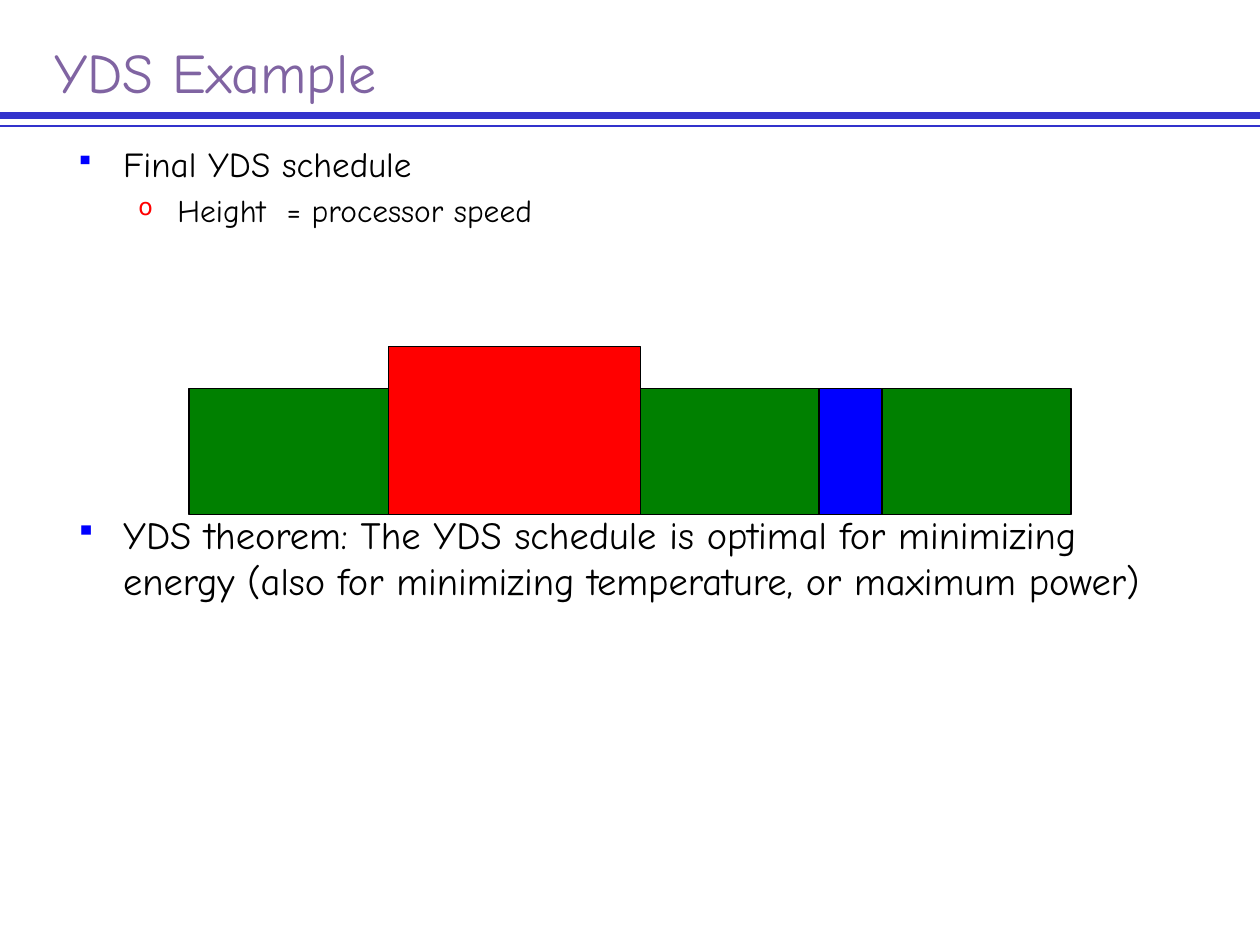
from dataclasses import dataclass

from lxml import etree
from pptx import Presentation
from pptx.dml.color import RGBColor
from pptx.enum.shapes import MSO_CONNECTOR, MSO_SHAPE
from pptx.enum.text import MSO_ANCHOR
from pptx.oxml.ns import qn
from pptx.util import Inches, Pt

STRAIGHT = MSO_CONNECTOR.STRAIGHT
RECTANGLE = MSO_SHAPE.RECTANGLE
ANCHOR_TOP = MSO_ANCHOR.TOP
ANCHOR_BOTTOM = MSO_ANCHOR.BOTTOM

COLUMNS, ROWS = 120, 90
CELL = Inches(10) // COLUMNS
BASELINE_ROW = 49


@dataclass(frozen=True)
class Theme:
    font: str = "Comic Neue"
    title: str = "8064A2"
    text: str = "000000"
    rule: str = "3333CC"
    outline: str = "000000"
    red: str = "FF0000"
    green: str = "008000"
    blue: str = "0000FF"
    title_size: int = 32
    topic_size: int = 20
    detail_size: int = 18
    theorem_size: int = 22
    thin: float = 0.75
    thick: float = 4.5


THEME = Theme()
BULLETS = (
    ("▪", THEME.blue, 0.38, 0.38),
    ("o", THEME.red, 0.81, 0.31),
)


def grid(*cells):
    return [round(cell * CELL) for cell in cells]


def color(value):
    return RGBColor.from_string(value)


def add_rule(slide, row, width):
    rule = slide.shapes.add_connector(STRAIGHT, *grid(0, row, COLUMNS, row))
    rule.line.color.rgb = color(THEME.rule)
    rule.line.width = Pt(width)
    etree.SubElement(rule._element.spPr, qn("a:effectLst"))


def add_text_frame(slide, box, anchor):
    frame = slide.shapes.add_textbox(*grid(*box)).text_frame
    frame.word_wrap = True
    frame.vertical_anchor = anchor
    return frame


def add_run(paragraph, text, size, text_color):
    run = paragraph.add_run()
    run.text = text
    run.font.name = THEME.font
    run.font.size = Pt(size)
    run.font.color.rgb = color(text_color)


def add_title(slide, text):
    frame = add_text_frame(slide, (4, 2.9, 110, 7.1), ANCHOR_BOTTOM)
    frame.margin_bottom = 0
    add_run(frame.paragraphs[0], text, THEME.title_size, THEME.title)


def set_bullet(paragraph, level):
    character, bullet_color, margin, hanging = BULLETS[level]
    paragraph.level = level
    properties = paragraph._p.get_or_add_pPr()
    properties.set("marL", str(Inches(margin)))
    properties.set("indent", str(-Inches(hanging)))
    holder = etree.SubElement(properties, qn("a:buClr"))
    etree.SubElement(holder, qn("a:srgbClr"), val=bullet_color)
    etree.SubElement(properties, qn("a:buSzPct"), val="75000")
    etree.SubElement(properties, qn("a:buChar"), char=character)


def add_body(slide, items):
    frame = add_text_frame(slide, (6, 13, 108, 67), ANCHOR_TOP)
    for index, (text, level, size, gap) in enumerate(items):
        paragraph = frame.add_paragraph() if index else frame.paragraphs[0]
        paragraph.space_before = Pt(gap)
        set_bullet(paragraph, level)
        add_run(paragraph, text, size, THEME.text)


def add_job(slide, start, duration, speed, fill):
    box = grid(start, BASELINE_ROW - speed, duration, speed)
    job = slide.shapes.add_shape(RECTANGLE, *box)
    job.shadow.inherit = False
    job.fill.solid()
    job.fill.fore_color.rgb = color(fill)
    job.line.color.rgb = color(THEME.outline)
    job.line.width = Pt(THEME.thin)


def main():
    presentation = Presentation()
    presentation.slide_width, presentation.slide_height = grid(COLUMNS, ROWS)
    slide = presentation.slides.add_slide(presentation.slide_layouts[6])

    add_rule(slide, 11, THEME.thick)
    add_rule(slide, 12, THEME.thin)
    add_title(slide, "YDS Example")
    add_body(slide, (
        ("Final YDS schedule", 0, THEME.topic_size, 4),
        ("Height  = processor speed", 1, THEME.detail_size, 3.6),
        ("YDS theorem: The YDS schedule is optimal for minimizing energy "
         "(also for minimizing temperature, or maximum power)",
         0, THEME.theorem_size, 161),
    ))
    for job in (
        (37, 24, 16, THEME.red),
        (18, 19, 12, THEME.green),
        (61, 41, 12, THEME.green),
        (78, 6, 12, THEME.blue),
    ):
        add_job(slide, *job)

    presentation.save("out.pptx")


if __name__ == "__main__":
    main()
